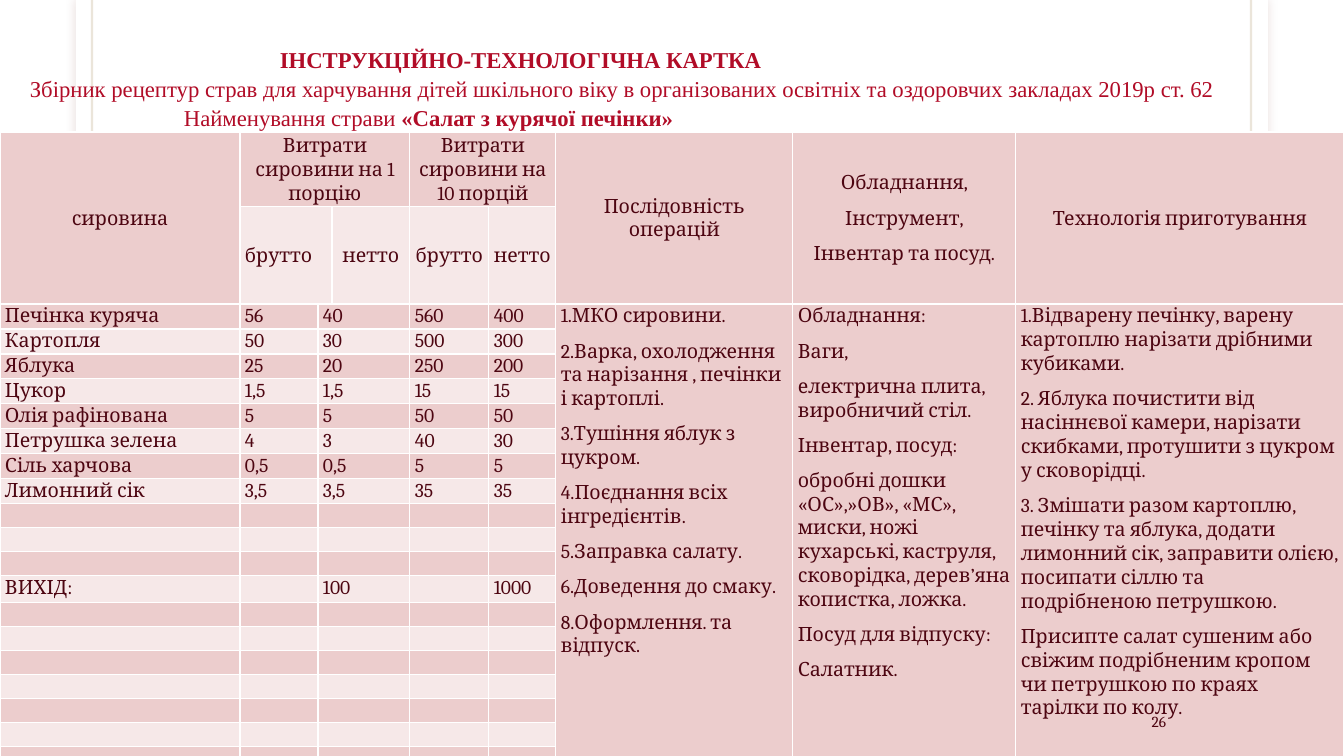
from lxml.etree import SubElement
from pptx import Presentation
from pptx.dml.color import RGBColor
from pptx.enum.shapes import MSO_CONNECTOR as Connector, MSO_SHAPE as Shape
from pptx.enum.text import MSO_ANCHOR as Anchor, PP_ALIGN as Align
from pptx.oxml.ns import qn
from pptx.util import Pt

PX = 914400 / 100.8
COLORS = {
    "white": "FFFFFF", "shadow": "65150F", "rail": "79540B", "title": "B10C27",
    "text": "4D0511", "dark_band": "ECCDCD", "light_band": "F6E8E8",
}
TITLE_FONT, BODY_FONT = "Times New Roman", "Cambria"


def px(length):
    return round(length * PX)


def rgb(name):
    return RGBColor.from_string(COLORS[name])


class CardSlide:
    """Draws the elements of a recipe card on one slide."""

    def __init__(self, deck):
        self.slide = deck.slides.add_slide(deck.slide_layouts[6])
        self.shapes = self.slide.shapes

    def style(self, paragraph, font, size, color, bold=None):
        paragraph.font.name = font
        paragraph.font.size = Pt(size)
        paragraph.font.color.rgb = rgb(color)
        paragraph.font.bold = bold

    def add_alpha(self, parent, percent):
        SubElement(parent, qn("a:alpha"), val=str(percent * 1000))

    def sheet(self, *box):
        sheet = self.shapes.add_shape(Shape.RECTANGLE, *map(px, box))
        sheet.shadow.inherit = False
        sheet.fill.solid()
        sheet.fill.fore_color.rgb = rgb("white")
        sheet.line.fill.background()
        effects = sheet._element.spPr.find(qn("a:effectLst"))
        glow = SubElement(effects, qn("a:outerShdw"), blurRad=str(Pt(7)), dist="0", dir="0")
        tint = SubElement(glow, qn("a:srgbClr"), val=COLORS["shadow"])
        self.add_alpha(tint, 15)

    def rail(self, x, height):
        rail = self.shapes.add_connector(Connector.STRAIGHT, px(x), 0, px(x), px(height))
        rail.line.width = Pt(1.5)
        rail.line.color.rgb = rgb("rail")
        self.add_alpha(rail._element.spPr.find(".//" + qn("a:srgbClr")), 15)
        SubElement(rail._element.spPr, qn("a:effectLst"))

    def text_box(self, *box):
        frame = self.shapes.add_textbox(*map(px, box)).text_frame
        frame.word_wrap = True
        return frame

    def title(self, lines, *box):
        frame = self.text_box(*box)
        frame.margin_top = px(9)
        for number, (indent, runs) in enumerate(lines):
            line = frame.add_paragraph() if number else frame.paragraphs[0]
            line._p.get_or_add_pPr().set("marL", str(px(indent)))
            line.line_spacing = Pt(20.6)
            self.style(line, TITLE_FONT, 16.2, "title")
            for text, bold in runs:
                run = line.add_run()
                run.text = text
                run.font.bold = bold

    def page_number(self, text, *box):
        frame = self.text_box(*box)
        frame.vertical_anchor = Anchor.MIDDLE
        number = frame.paragraphs[0]
        number.text = text
        number.alignment = Align.RIGHT
        self.style(number, BODY_FONT, 11, "text")

    def table(self, left, top, widths, heights):
        box = map(px, (left, top, sum(widths), sum(heights)))
        table = self.shapes.add_table(len(heights), len(widths), *box).table
        table.first_row = table.horz_banding = False
        for column, width in zip(table.columns, widths):
            column.width = px(width)
        for number, (row, height) in enumerate(zip(table.rows, heights)):
            row.height = px(height)
            for cell in row.cells:
                self.cell(cell, "light_band" if number % 2 else "dark_band")
        return table

    def cell(self, cell, band):
        cell.margin_left = cell.margin_right = px(5)
        cell.margin_top = cell.margin_bottom = 0
        for side in ("lnL", "lnR", "lnT", "lnB"):
            border = SubElement(cell._tc.get_or_add_tcPr(), qn("a:" + side), w=str(Pt(1)))
            SubElement(SubElement(border, qn("a:solidFill")), qn("a:srgbClr"), val=COLORS["white"])
        cell.fill.solid()
        cell.fill.fore_color.rgb = rgb(band)
        SubElement(cell.text_frame.paragraphs[0]._p, qn("a:endParaRPr"), sz="1400")

    def cell_text(self, cell, text, align=Align.LEFT, anchor=Anchor.TOP):
        cell.vertical_anchor = anchor
        cell.text_frame.text = text
        for paragraph in cell.text_frame.paragraphs:
            paragraph.alignment = align
            paragraph.line_spacing = 1.06
            paragraph.space_after = Pt(8)
            self.style(paragraph, BODY_FONT, 14, "text")


TITLE = [
    (250, [("ІНСТРУКЦІЙНО-ТЕХНОЛОГІЧНА КАРТКА", True)]),
    (0, [("Збірник рецептур страв для харчування дітей шкільного віку в "
          "організованих освітніх та оздоровчих закладах 2019р ст. 62", False)]),
    (154, [("Найменування страви ", False), ("«Салат з курячої печінки»", True)]),
]
COLUMN_WIDTHS = [240, 78, 14, 78, 79, 67, 237, 223, 328]
ROW_HEIGHTS = [72, 94] + [24] * 11 + [27] + [24] * 6 + [105]
LAST_ROW = len(ROW_HEIGHTS) - 1
HEADINGS = [
    (0, 0, 1, 0, "сировина"),
    (0, 1, 0, 3, "Витрати сировини на 1 порцію"),
    (0, 4, 0, 5, "Витрати сировини на 10 порцій"),
    (0, 6, 1, 6, "Послідовність операцій"),
    (0, 7, 1, 7, "Обладнання,\nІнструмент,\nІнвентар та посуд."),
    (0, 8, 1, 8, "Технологія приготування"),
    (1, 1, 1, 2, "брутто"),
    (1, 3, 1, 3, "нетто"),
    (1, 4, 1, 4, "брутто"),
    (1, 5, 1, 5, "нетто"),
]
AMOUNT_COLUMNS = [0, 1, 2, 4, 5]
AMOUNTS = {
    2: ["Печінка куряча", "56", "40", "560", "400"],
    3: ["Картопля", "50", "30", "500", "300"],
    4: ["Яблука", "25", "20", "250", "200"],
    5: ["Цукор", "1,5", "1,5", "15", "15"],
    6: ["Олія рафінована", "5", "5", "50", "50"],
    7: ["Петрушка зелена", "4", "3", "40", "30"],
    8: ["Сіль харчова", "0,5", "0,5", "5", "5"],
    9: ["Лимонний сік", "3,5", "3,5", "35", "35"],
    13: ["ВИХІД:", "", "100", "", "1000"],
}
INSTRUCTIONS = {
    6: ["1.МКО сировини.", "2.Варка, охолодження та нарізання , печінки і картоплі.",
        "3.Тушіння яблук з цукром.", "4.Поєднання всіх інгредієнтів.",
        "5.Заправка салату.", "6.Доведення до смаку.", "8.Оформлення. та відпуск."],
    7: ["Обладнання:", "Ваги,", "електрична плита, виробничий стіл.", "Інвентар, посуд:",
        "обробні дошки «ОС»,»ОВ», «МС», миски, ножі кухарські, каструля, "
        "сковорідка, дерев’яна копистка, ложка.", "Посуд для відпуску:", "Салатник."],
    8: ["1.Відварену печінку, варену картоплю нарізати дрібними кубиками.",
        "2. Яблука почистити від насіннєвої камери, нарізати скибками, "
        "протушити з цукром у сковорідці.",
        "3. Змішати разом картоплю, печінку та яблука, додати лимонний сік, "
        "заправити олією, посипати сіллю та подрібненою петрушкою.",
        "Присипте салат сушеним або свіжим подрібненим кропом чи петрушкою "
        "по краях тарілки по колу."],
}


def main():
    deck = Presentation()
    deck.slide_width, deck.slide_height = px(1344), px(756)
    card = CardSlide(deck)
    card.sheet(76, 0, 1192, 756)
    for x in (92, 1251):
        card.rail(x, 756)
    card.title(TITLE, 20, 35, 1310, 152)

    recipe = card.table(0, 132, COLUMN_WIDTHS, ROW_HEIGHTS)
    for top, left, bottom, right, text in HEADINGS:
        heading = recipe.cell(top, left)
        if (top, left) != (bottom, right):
            heading.merge(recipe.cell(bottom, right))
        align = Align.LEFT if (top, left) == (1, 1) else Align.CENTER
        card.cell_text(heading, text, align, Anchor.MIDDLE)
    for row in range(2, LAST_ROW + 1):
        recipe.cell(row, 2).merge(recipe.cell(row, 3))
    for row, amounts in AMOUNTS.items():
        for column, amount in zip(AMOUNT_COLUMNS, amounts):
            if amount:
                card.cell_text(recipe.cell(row, column), amount)
    for column, steps in INSTRUCTIONS.items():
        recipe.cell(2, column).merge(recipe.cell(LAST_ROW, column))
        card.cell_text(recipe.cell(2, column), "\n".join(steps))

    card.page_number("26", 1075, 706, 101, 30)
    deck.save("out.pptx")


if __name__ == "__main__":
    main()
